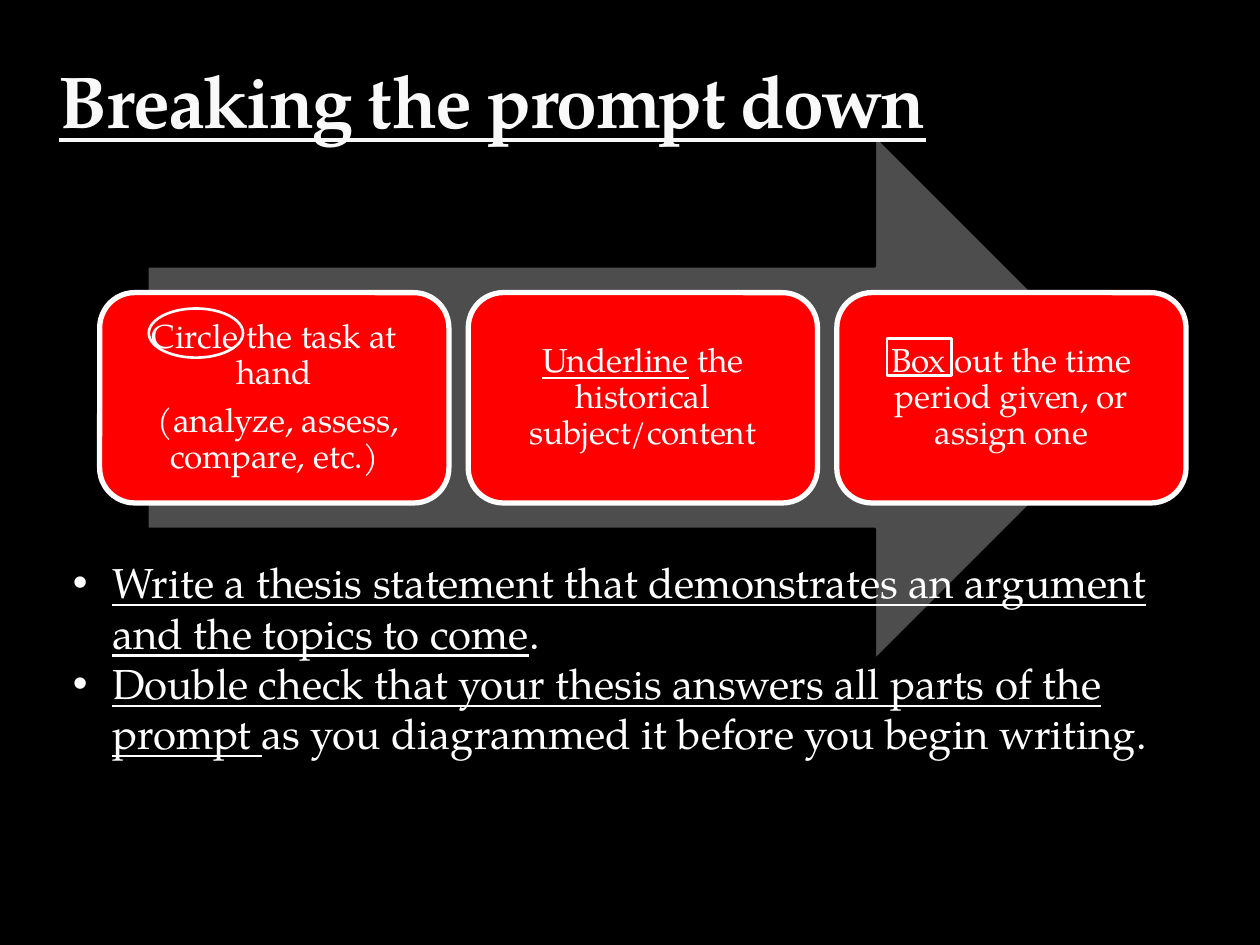
from lxml import etree
from pptx import Presentation
from pptx.dml.color import RGBColor
from pptx.enum.shapes import MSO_SHAPE
from pptx.enum.text import MSO_ANCHOR, PP_ALIGN
from pptx.oxml.ns import qn
from pptx.util import Cm, Pt

ARROW, CARD = MSO_SHAPE.RIGHT_ARROW, MSO_SHAPE.ROUNDED_RECTANGLE
OVAL, BOX = MSO_SHAPE.OVAL, MSO_SHAPE.RECTANGLE
MIDDLE, BOTTOM = MSO_ANCHOR.MIDDLE, MSO_ANCHOR.BOTTOM
CENTER = PP_ALIGN.CENTER

BLACK = RGBColor(0x00, 0x00, 0x00)
WHITE = RGBColor(0xFF, 0xFF, 0xFF)
OFF_WHITE = RGBColor(0xF9, 0xF9, 0xF9)
GRAY = RGBColor(0x4D, 0x4D, 0x4D)
RED = RGBColor(0xFF, 0x00, 0x00)
FONT = "TeX Gyre Pagella"

# Each paragraph is a list of (text, underlined) runs
STEPS = [
    [[("Circle the task at hand", False)],
     [(" (analyze, assess, compare, etc.)", False)]],
    [[("Underline", True), (" the historical subject/content", False)]],
    [[("Box out the time period given, or assign one", False)]],
]
ADVICE = [
    [("Write a thesis statement that demonstrates an argument "
      "and the topics to come", True), (".", False)],
    [("Double check that your thesis answers all parts of the prompt ", True),
     ("as you diagrammed it before you begin writing.", False)],
]


def add_shape(s, kind, left, top, width, height, fill, line, weight):
    sp = s.shapes.add_shape(kind, Cm(left), Cm(top), Cm(width), Cm(height))
    sp.shadow.inherit = False
    if fill is None:
        sp.fill.background()
    else:
        sp.fill.solid()
        sp.fill.fore_color.rgb = fill
    sp.line.color.rgb = line
    sp.line.width = Pt(weight)
    return sp


def add_text_box(s, left, top, width, height):
    sp = s.shapes.add_textbox(Cm(left), Cm(top), Cm(width), Cm(height))
    sp.text_frame.word_wrap = True
    return sp.text_frame


def write_paragraphs(tf, paragraphs, size, color=WHITE):
    for i, runs in enumerate(paragraphs):
        p = tf.paragraphs[0] if i == 0 else tf.add_paragraph()
        for text, underlined in runs:
            r = p.add_run()
            r.text = text
            r.font.name = FONT
            r.font.size = Pt(size)
            r.font.color.rgb = color
            r.font.underline = underlined


def add_bullet(p):
    pPr = p._p.get_or_add_pPr()
    pPr.set("marL", str(Cm(0.79)))
    pPr.set("indent", str(Cm(-0.79)))
    etree.SubElement(pPr, qn("a:buFont")).set("typeface", "Arial")
    etree.SubElement(pPr, qn("a:buChar")).set("char", "•")


def add_title(s, text):
    tf = add_text_box(s, 0.94, 0.76, 22.86, 2.26)
    tf.vertical_anchor = BOTTOM
    write_paragraphs(tf, [[(text, True)]], 42, OFF_WHITE)
    r = tf.paragraphs[0].runs[0]
    r.font.bold = True
    r.font._element.set("spc", "-100")


def add_step(s, left, top, paragraphs):
    sp = add_shape(s, CARD, left, top, 7.04, 4.24, RED, WHITE, 3)
    tf = sp.text_frame
    tf.word_wrap = True
    tf.vertical_anchor = MIDDLE
    tf.margin_left = tf.margin_right = Cm(0.2)
    tf.margin_top = tf.margin_bottom = Cm(0.2)
    write_paragraphs(tf, paragraphs, 19)
    for p in tf.paragraphs:
        p.alignment = CENTER
        p.line_spacing = 0.9
        p.space_after = Pt(6.65)


def add_advice(s):
    tf = add_text_box(s, 1.22, 11.1, 23.5, 5.38)
    write_paragraphs(tf, ADVICE, 24)
    for p in tf.paragraphs:
        add_bullet(p)


def main():
    prs = Presentation()
    prs.slide_width, prs.slide_height = Cm(25.4), Cm(19.05)
    s = prs.slides.add_slide(prs.slide_layouts[6])
    s.background.fill.solid()
    s.background.fill.fore_color.rgb = BLACK

    # Process arrow with the three steps on it
    add_shape(s, ARROW, 2.97, 2.72, 19.96, 10.59, GRAY, BLACK, 1.5)
    for i, paragraphs in enumerate(STEPS):
        add_step(s, 2.01 + 7.43 * i, 5.9, paragraphs)

    # Title and advice
    add_title(s, "Breaking the prompt down")
    add_advice(s)

    # Marks around the words "Circle" and "Box"
    add_shape(s, OVAL, 3, 6.22, 1.9, 0.99, None, WHITE, 1.5)
    add_shape(s, BOX, 17.88, 6.83, 1.3, 0.74, None, WHITE, 1.5)

    prs.save("out.pptx")


if __name__ == "__main__":
    main()
